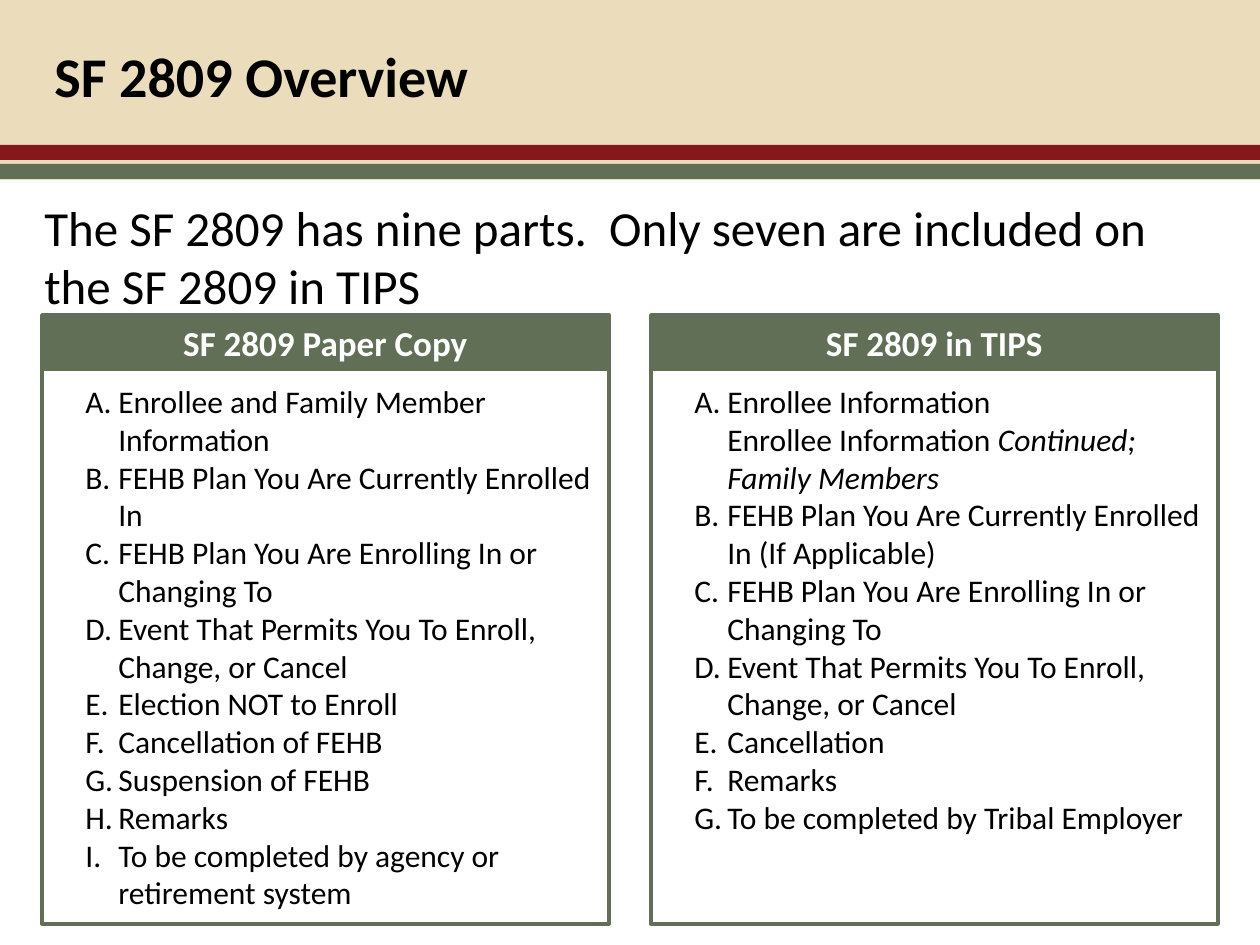
from pptx import Presentation
from pptx.dml.color import RGBColor
from pptx.enum.shapes import MSO_SHAPE
from pptx.enum.text import MSO_ANCHOR, PP_ALIGN
from pptx.oxml.xmlchemy import OxmlElement
from pptx.util import Emu, Pt

PX = 914400 // 126
COLORS = {
    "tan": "EBDCBB",
    "red": "84181B",
    "green": "616F57",
    "white": "FFFFFF",
    "black": "000000",
}


def add_rectangle(page, left, top, width, height, fill, line=None):
    box = page.shapes.add_shape(
        MSO_SHAPE.RECTANGLE, *[Emu(n * PX) for n in (left, top, width, height)]
    )
    box.shadow.inherit = False
    box.fill.solid()
    box.fill.fore_color.rgb = RGBColor.from_string(COLORS[fill])
    if line:
        box.line.color.rgb = RGBColor.from_string(COLORS[line])
        box.line.width = Pt(2)
    else:
        box.line.fill.background()
    return box


def set_font(paragraph, size, color="black", bold=False):
    paragraph.font.name = "Calibri"
    paragraph.font.size = Pt(size)
    paragraph.font.bold = bold
    paragraph.font.color.rgb = RGBColor.from_string(COLORS[color])


deck = Presentation()
deck.slide_width = Emu(1260 * PX)
deck.slide_height = Emu(945 * PX)
page = deck.slides.add_slide(deck.slide_layouts[6])

for top, height, fill in [(0, 180, "tan"), (145, 15, "red"), (164, 15, "green")]:
    add_rectangle(page, 0, top, 1260, height, fill)

headings = [
    (42, 0, 1033, 151, "SF 2809 Overview", 32, True, MSO_ANCHOR.MIDDLE),
    (
        32, 191, 1197, 126,
        "The SF 2809 has nine parts.  Only seven are included on the SF 2809 in TIPS",
        28, False, MSO_ANCHOR.TOP,
    ),
]
for left, top, width, height, text, size, bold, anchor in headings:
    box = page.shapes.add_textbox(*[Emu(n * PX) for n in (left, top, width, height)])
    box.text_frame.word_wrap = True
    box.text_frame.vertical_anchor = anchor
    para = box.text_frame.paragraphs[0]
    para.text = text
    set_font(para, size, bold=bold)

panels = [
    ("SF 2809 Paper Copy", [
        "Enrollee and Family Member Information",
        "FEHB Plan You Are Currently Enrolled In",
        "FEHB Plan You Are Enrolling In or Changing To",
        "Event That Permits You To Enroll, Change, or Cancel",
        "Election NOT to Enroll",
        "Cancellation of FEHB",
        "Suspension of FEHB",
        "Remarks",
        "To be completed by agency or retirement system",
    ]),
    ("SF 2809 in TIPS", [
        "Enrollee Information\vEnrollee Information |Continued; Family Members",
        "FEHB Plan You Are Currently Enrolled In (If Applicable)",
        "FEHB Plan You Are Enrolling In or Changing To",
        "Event That Permits You To Enroll, Change, or Cancel",
        "Cancellation",
        "Remarks",
        "To be completed by Tribal Employer",
    ]),
]
for column, (heading, parts) in enumerate(panels):
    left = 42 + column * 609
    panel = add_rectangle(page, left, 369, 567, 555, "white", "green")
    frame = panel.text_frame
    frame.word_wrap = True
    frame.vertical_anchor = MSO_ANCHOR.TOP
    frame.margin_top = Emu(13 * PX)
    for index, part in enumerate(parts):
        para = frame.paragraphs[0] if index == 0 else frame.add_paragraph()
        plain, _, italic = part.partition("|")
        para.text = plain
        if italic:
            span = para.add_run()
            span.text = italic
            span.font.italic = True
        para.alignment = PP_ALIGN.LEFT
        properties = para._p.get_or_add_pPr()
        properties.set("marL", str(64 * PX))
        properties.set("indent", str(-33 * PX))
        numbering = OxmlElement("a:buAutoNum")
        numbering.set("type", "alphaUcPeriod")
        properties.append(numbering)
        set_font(para, 18)

    header = add_rectangle(page, left, 315, 567, 54, "green", "green")
    header.text_frame.word_wrap = True
    header.text_frame.vertical_anchor = MSO_ANCHOR.MIDDLE
    para = header.text_frame.paragraphs[0]
    para.text = heading
    para.alignment = PP_ALIGN.CENTER
    set_font(para, 20, "white", True)

deck.save("out.pptx")
